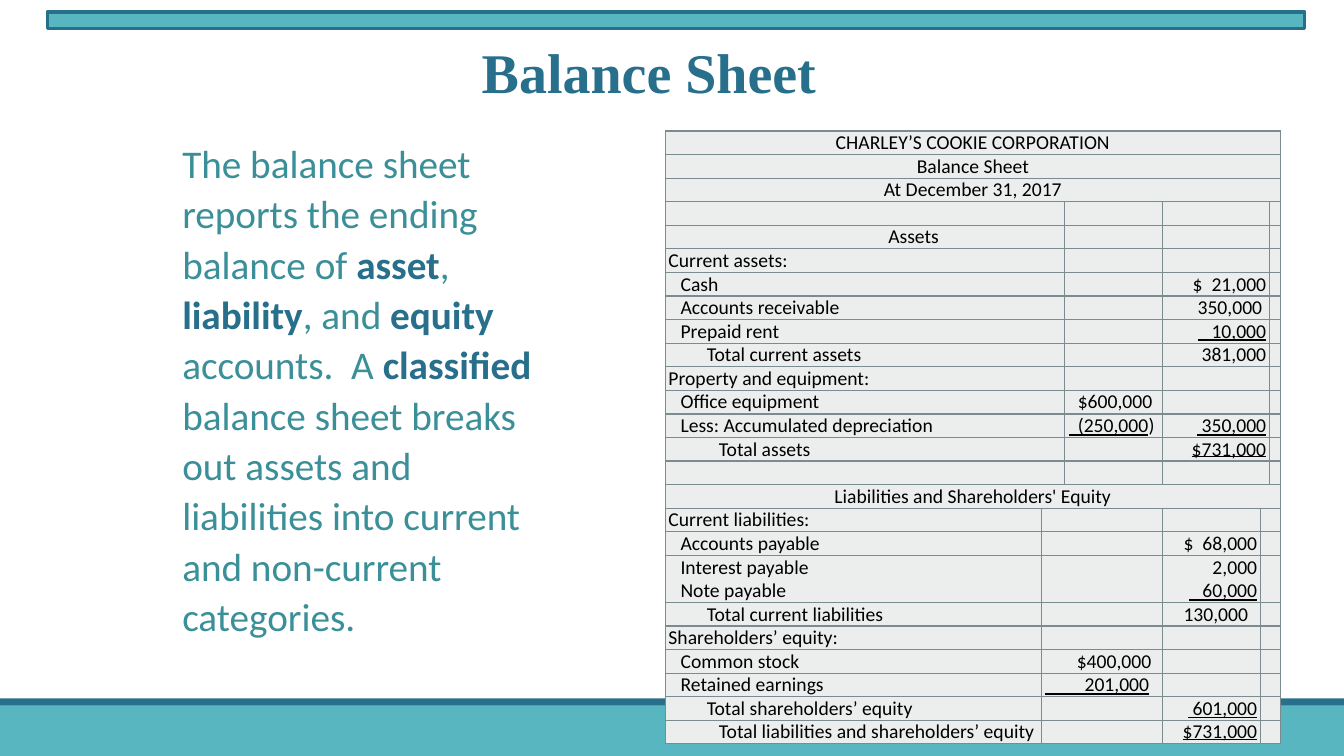
from lxml import etree
from pptx import Presentation
from pptx.dml.color import RGBColor
from pptx.enum import shapes, text
from pptx.oxml import ns
from pptx.util import Inches, Pt

TEAL, BLUE, TEXT_TEAL = "58B6C0", "276F8B", "3A8F98"
CELL_FILL, BORDER, BLACK = "ECEEEE", "7A8C8E", "000000"

# left, top, width, height, fill, line
BARS = [
    (0, 7, 13.33, 0.5, TEAL, None),
    (0, 6.93, 13.33, 0.07, BLUE, None),
    (0.47, 0.12, 12.47, 0.16, TEAL, BLUE),
]
TITLE = "Balance Sheet"
# Every second part is a highlighted term
BODY = [
    "The balance sheet reports the ending balance of ", "asset", ", ",
    "liability", ", and ", "equity", " accounts.  A ", "classified",
    " balance sheet breaks out assets and liabilities into current and "
    "non-current categories.",
]

# Indents of the labels, in inches
HEADING, ITEM, SUBTOTAL, TOTAL, CENTERED = 0, 0.12, 0.38, 0.5, 2.18
# Columns covered by each cell, as first and last
BANNER = [(0, 5)]
ASSETS = [(0, 1), (2, 2), (3, 4), (5, 5)]
LIABILITIES = [(0, 0), (1, 2), (3, 3), (4, 5)]
COLUMN_WIDTHS = [3.73, 0.23, 0.97, 0.97, 0.09, 0.11]
LINE_HEIGHT = 0.23
MARGIN = 0.03

# layout, label, indent, middle amount, right amount; "|" parts two lines.
# Text between "_" is underlined, an amount after "=" is double underlined.
ROWS = [
    (BANNER, "CHARLEY’S COOKIE CORPORATION", 0, "", ""),
    (BANNER, "Balance Sheet", 0, "", ""),
    (BANNER, "At December 31, 2017", 0, "", ""),
    (ASSETS, "", HEADING, "", ""),
    (ASSETS, "Assets", CENTERED, "", ""),
    (ASSETS, "Current assets:", HEADING, "", ""),
    (ASSETS, "Cash", ITEM, "", "$  21,000"),
    (ASSETS, "Accounts receivable", ITEM, "", "350,000"),
    (ASSETS, "Prepaid rent", ITEM, "", "_   10,000_"),
    (ASSETS, "Total current assets", SUBTOTAL, "", "381,000"),
    (ASSETS, "Property and equipment:", HEADING, "", ""),
    (ASSETS, "Office equipment", ITEM, "$600,000", ""),
    (ASSETS, "Less: Accumulated depreciation", ITEM, "_  (250,000_)", "_ 350,000_"),
    (ASSETS, "Total assets", TOTAL, "", "=$731,000"),
    (ASSETS, "", HEADING, "", ""),
    (BANNER, "Liabilities and Shareholders' Equity", 0, "", ""),
    (LIABILITIES, "Current liabilities:", HEADING, "", ""),
    (LIABILITIES, "Accounts payable", ITEM, "", "$  68,000"),
    (LIABILITIES, "Interest payable|Note payable", ITEM, "", "2,000|_   60,000_"),
    (LIABILITIES, "Total current liabilities", SUBTOTAL, "", "130,000"),
    (LIABILITIES, "Shareholders’ equity:", HEADING, "", ""),
    (LIABILITIES, "Common stock", ITEM, "$400,000", ""),
    (LIABILITIES, "Retained earnings", ITEM, "_         201,000_", ""),
    (LIABILITIES, "Total shareholders’ equity", SUBTOTAL, "", "_ 601,000_"),
    (LIABILITIES, "Total liabilities and shareholders’ equity", TOTAL, "", "=$731,000"),
]
# Amounts that stand further from the right edge of their cell
RIGHT_MARGINS = {"350,000": 0.07, "$600,000": 0.1, "_  (250,000_)": 0.08,
                 "130,000": 0.12, "$400,000": 0.11, "_         201,000_": 0.13}


def color(value):
    return RGBColor.from_string(value)


def apply(target, values):
    for name, value in values.items():
        setattr(target, name, value)


def add_run(paragraph, content, size, font, hex_color, **more):
    run = paragraph.add_run()
    run.text = content
    apply(run.font, {"size": Pt(size), "name": font, **more})
    run.font.color.rgb = color(hex_color)


def add_bar(slide, left, top, width, height, fill, line):
    bar = slide.shapes.add_shape(
        shapes.MSO_SHAPE.RECTANGLE, *map(Inches, (left, top, width, height)))
    bar.shadow.inherit = False
    bar.fill.solid()
    bar.fill.fore_color.rgb = color(fill)
    if line:
        bar.line.color.rgb = color(line)
        bar.line.width = Pt(2.25)
    else:
        bar.line.fill.background()


def add_text_box(slide, left, top, width, height, wrap):
    """Return the only paragraph of a new text box."""
    box = slide.shapes.add_textbox(*map(Inches, (left, top, width, height)))
    box.text_frame.word_wrap = wrap
    return box.text_frame.paragraphs[0]


def format_cell(cell):
    """Give the cell its four borders and its fill."""
    properties = cell._tc.get_or_add_tcPr()
    for side in ("a:lnL", "a:lnR", "a:lnT", "a:lnB"):
        line = etree.SubElement(properties, ns.qn(side), w=str(Pt(1)))
        fill = etree.SubElement(line, ns.qn("a:solidFill"))
        etree.SubElement(fill, ns.qn("a:srgbClr"), val=BORDER)
    cell.fill.solid()
    cell.fill.fore_color.rgb = color(CELL_FILL)
    apply(cell, {"margin_left": Inches(MARGIN), "margin_right": Inches(MARGIN),
                 "margin_top": 0, "margin_bottom": 0})
    cell.text_frame.paragraphs[0].font.size = Pt(14)
    # An empty cell takes its line height from the end mark
    if not cell.is_spanned:
        end = etree.SubElement(cell.text_frame.paragraphs[0]._p, ns.qn("a:endParaRPr"))
        end.set("sz", "1400")
        etree.SubElement(end, ns.qn("a:latin"), typeface="Calibri")


def write_cell(cell, content, alignment, indent=0):
    cell.margin_right = Inches(RIGHT_MARGINS.get(content, MARGIN))
    frame = cell.text_frame
    for index, line in enumerate(content.split("|")):
        paragraph = frame.add_paragraph() if index else frame.paragraphs[0]
        paragraph.alignment = alignment
        if indent:
            paragraph._p.get_or_add_pPr().set("marL", str(Inches(indent)))
        marked = text.MSO_UNDERLINE.SINGLE_LINE
        if line.startswith("="):
            marked, line = text.MSO_UNDERLINE.DOUBLE_LINE, f"_{line[1:]}_"
        for part, piece in enumerate(line.split("_")):
            if piece:
                add_run(paragraph, piece, 14, "Calibri", BLACK,
                        underline=marked if part % 2 else False)


def add_balance_sheet(slide):
    line_counts = [row[1].count("|") + 1 for row in ROWS]
    table_frame = slide.shapes.add_table(
        len(ROWS), len(COLUMN_WIDTHS), Inches(6.6), Inches(1.3),
        Inches(sum(COLUMN_WIDTHS)), Inches(LINE_HEIGHT * sum(line_counts)))
    table = table_frame.table
    apply(table, {"first_row": False, "horz_banding": False})
    for column, width in zip(table.columns, COLUMN_WIDTHS):
        column.width = Inches(width)
    align = text.PP_ALIGN
    for index, (layout, label, indent, middle, right) in enumerate(ROWS):
        table.rows[index].height = Inches(LINE_HEIGHT * line_counts[index])
        for first, last in layout:
            if last > first:
                table.cell(index, first).merge(table.cell(index, last))
        for column in range(len(COLUMN_WIDTHS)):
            format_cell(table.cell(index, column))
        label_alignment = align.CENTER if layout is BANNER else align.LEFT
        contents = [(label, label_alignment, indent),
                    (middle, align.RIGHT), (right, align.RIGHT)]
        for (first, _), content in zip(layout, contents):
            if content[0]:
                write_cell(table.cell(index, first), *content)


def main():
    presentation = Presentation()
    apply(presentation, {"slide_width": Inches(13.33), "slide_height": Inches(7.5)})
    slide = presentation.slides.add_slide(presentation.slide_layouts[6])
    for bar in BARS:
        add_bar(slide, *bar)

    body = add_text_box(slide, 1.71, 1.3, 3.77, 5.14, True)
    apply(body, {"line_spacing": 1.07, "space_after": Pt(8)})
    for index, part in enumerate(BODY):
        term = index % 2 == 1
        add_run(body, part, 28, "Calibri", BLUE if term else TEXT_TEAL, bold=term)

    title = add_text_box(slide, 4.66, 0.32, 3.55, 0.77, False)
    apply(title, {"alignment": text.PP_ALIGN.CENTER, "space_before": Pt(12)})
    add_run(title, TITLE, 40, "Times New Roman", BLUE, bold=True)

    add_balance_sheet(slide)
    presentation.save("out.pptx")


if __name__ == "__main__":
    main()
